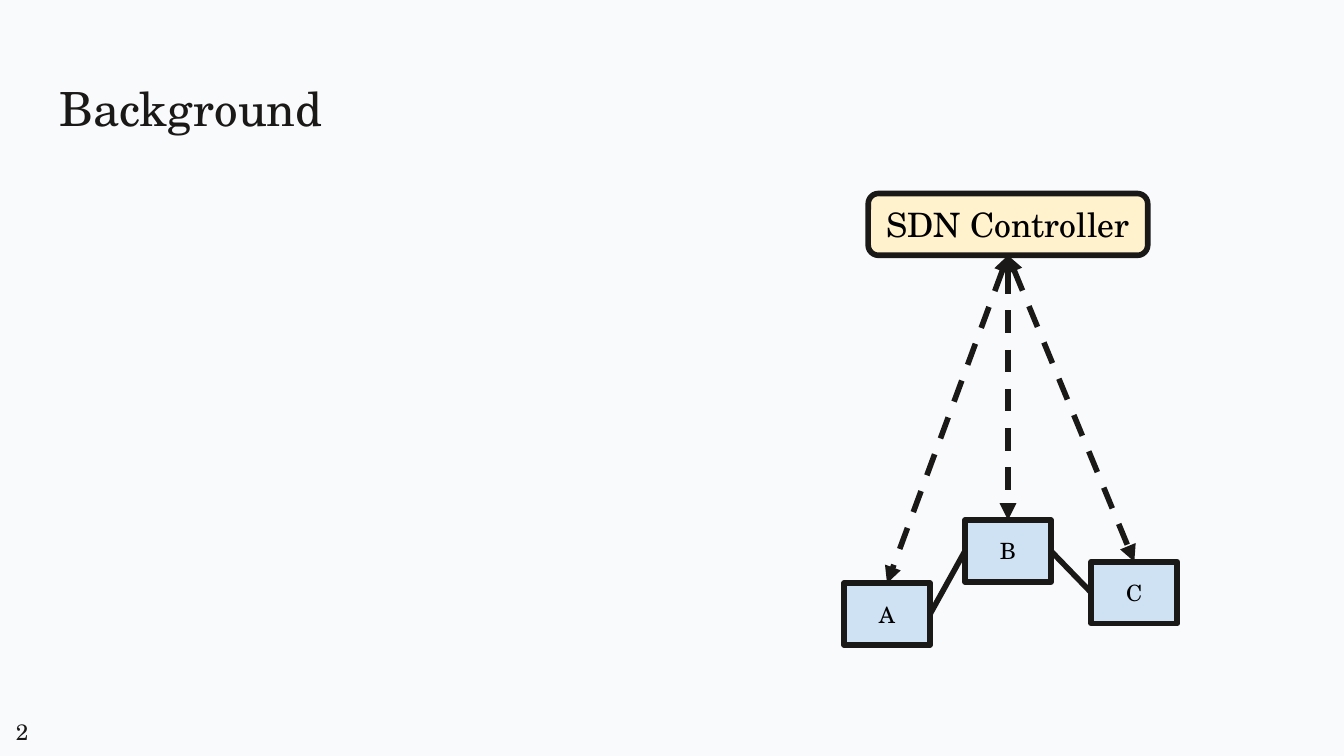
import pptx
import pptx.dml.color
import pptx.enum.dml
import pptx.enum.shapes
import pptx.enum.text
import pptx.oxml
import pptx.oxml.ns
import pptx.util
from pptx.util import Inches

COLORS = {
    "background": "F9FAFB",
    "ink": "1B1918",
    "label": "000000",
    "switch": "CFE2F3",
    "controller": "FFF2CC",
}
FONT = "TeX Gyre Schola"
LINE_WIDTH = 3
SWITCH_SIZE = (0.64, 0.46)
SWITCH_POSITIONS = {"A": (6.28, 4.34), "B": (7.18, 3.87), "C": (8.12, 4.18)}
TOP, LEFT, BOTTOM, RIGHT = range(4)


def rgb(name):
    return pptx.dml.color.RGBColor.from_string(COLORS[name])


def write_text(shape, text, size, color, alignment, anchor):
    frame = shape.text_frame
    frame.word_wrap = True
    frame.auto_size = pptx.enum.text.MSO_AUTO_SIZE.NONE
    frame.vertical_anchor = anchor
    frame.margin_left = frame.margin_right = Inches(0.1)
    frame.margin_top = frame.margin_bottom = Inches(0.1)
    paragraph = frame.paragraphs[0]
    paragraph.alignment = alignment
    run = paragraph.add_run()
    run.text = text
    run.font.name = FONT
    run.font.size = pptx.util.Pt(size)
    run.font.color.rgb = rgb(color)


def write_plain_text(shape, text, size):
    write_text(shape, text, size, "ink", pptx.enum.text.PP_ALIGN.LEFT,
               pptx.enum.text.MSO_ANCHOR.TOP)


def append_line_part(line, tag, **attributes):
    """Add a join or an arrowhead to the line's XML."""
    part = pptx.oxml.parse_xml(f"<a:{tag} {pptx.oxml.ns.nsdecls('a')}/>")
    for name, value in attributes.items():
        part.set(name, value)
    line._get_or_add_ln().append(part)


def style_line(line):
    line.color.rgb = rgb("ink")
    line.width = pptx.util.Pt(LINE_WIDTH)


def add_title(slide, text):
    title = slide.shapes.title
    title.left, title.top = Inches(0.34), Inches(0.49)
    title.width, title.height = Inches(5), Inches(0.63)
    write_plain_text(title, text, 25.2)


def add_page_number(slide, text):
    box = slide.shapes.add_textbox(
        Inches(0.02), Inches(5.24), Inches(0.51), Inches(0.35))
    write_plain_text(box, text, 12)


def add_node(slide, preset, position, size, fill, text, text_size):
    """Add an outlined box with a centred label."""
    node = slide.shapes.add_shape(
        preset, *[Inches(length) for length in position + size])
    node.shadow.inherit = False
    node.fill.solid()
    node.fill.fore_color.rgb = rgb(fill)
    style_line(node.line)
    append_line_part(node.line, "round")
    write_text(node, text, text_size, "label", pptx.enum.text.PP_ALIGN.CENTER,
               pptx.enum.text.MSO_ANCHOR.MIDDLE)
    return node


def add_link(slide, start, start_side, end, end_side):
    connector = slide.shapes.add_connector(
        pptx.enum.shapes.MSO_CONNECTOR.STRAIGHT, 0, 0, 0, 0)
    connector.begin_connect(start, start_side)
    connector.end_connect(end, end_side)
    style_line(connector.line)
    connector._element.spPr.append(
        pptx.oxml.parse_xml(f"<a:effectLst {pptx.oxml.ns.nsdecls('a')}/>"))
    return connector


def add_control_channel(slide, controller, switch):
    """Join controller and switch with a dashed two-way arrow."""
    line = add_link(slide, controller, BOTTOM, switch, TOP).line
    line.dash_style = pptx.enum.dml.MSO_LINE.DASH
    append_line_part(line, "round")
    append_line_part(line, "headEnd", type="triangle")
    append_line_part(line, "tailEnd", type="triangle")


def add_network(slide):
    presets = pptx.enum.shapes.MSO_SHAPE
    switches = {
        name: add_node(slide, presets.RECTANGLE, position, SWITCH_SIZE,
                       "switch", name, 12)
        for name, position in SWITCH_POSITIONS.items()
    }
    controller = add_node(slide, presets.ROUNDED_RECTANGLE, (6.46, 1.44),
                          (2.08, 0.46), "controller", "SDN Controller", 18)
    for start, end in ("AB", "BC"):
        add_link(slide, switches[start], RIGHT, switches[end], LEFT)
    for switch in switches.values():
        add_control_channel(slide, controller, switch)


def main():
    presentation = pptx.Presentation()
    presentation.slide_width = Inches(10)
    presentation.slide_height = Inches(10 * 9 / 16)
    slide = presentation.slides.add_slide(presentation.slide_layouts[5])
    slide.background.fill.solid()
    slide.background.fill.fore_color.rgb = rgb("background")
    add_title(slide, "Background")
    add_page_number(slide, "2")
    add_network(slide)
    presentation.save("out.pptx")


if __name__ == "__main__":
    main()
